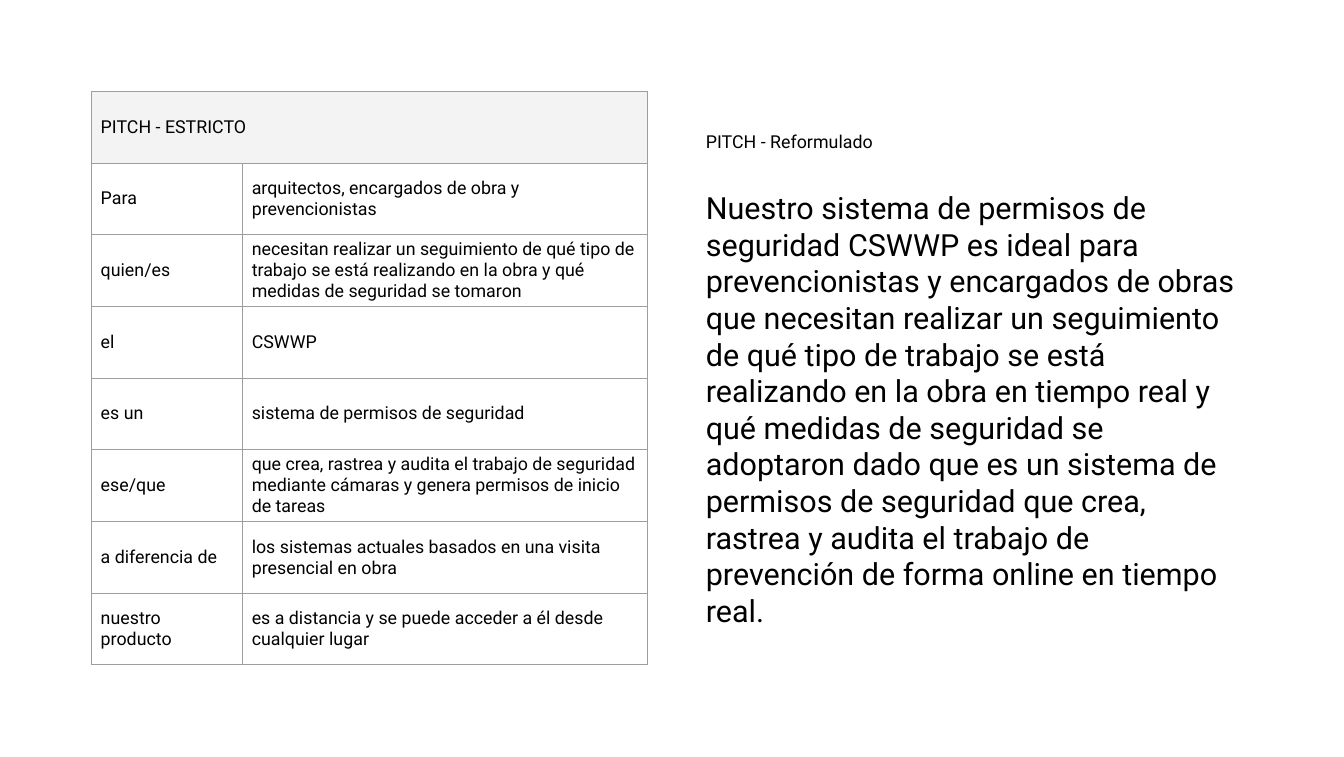
import pptx
import pptx.util
import pptx.dml.color
import pptx.enum.text
import pptx.oxml
import pptx.oxml.ns
import lxml.etree

theme = {
    "font": "Roboto",
    "text": "000000",
    "header": "F3F3F3",
    "border": "9E9E9E",
    "border_width": 0.75,
    "label_size": 14,
    "statement_size": 24,
    "statement_gap": 28.8,
}

pitch_heading = "PITCH - ESTRICTO"
pitch_parts = [
    ("Para", "arquitectos, encargados de obra y prevencionistas"),
    ("quien/es", "necesitan realizar un seguimiento de qué tipo de trabajo se está "
                 "realizando en la obra y qué medidas de seguridad se tomaron"),
    ("el", "CSWWP"),
    ("es un", "sistema de permisos de seguridad"),
    ("ese/que", "que crea, rastrea y audita el trabajo de seguridad mediante cámaras "
                "y genera permisos de inicio de tareas"),
    ("a diferencia de", "los sistemas actuales basados en una visita presencial en obra"),
    ("nuestro producto", "es a distancia y se puede acceder a él desde cualquier lugar"),
]
reformulated_heading = "PITCH - Reformulado"
reformulated_pitch = (
    "Nuestro sistema de permisos de seguridad CSWWP es ideal para prevencionistas y "
    "encargados de obras que necesitan realizar un seguimiento de qué tipo de trabajo "
    "se está realizando en la obra en tiempo real y qué medidas de seguridad se "
    "adoptaron dado que es un sistema de permisos de seguridad que crea, rastrea y "
    "audita el trabajo de prevención de forma online en tiempo real."
)


def add_run(paragraph, wording, size):
    run = paragraph.add_run()
    run.text = wording
    run.font.name = theme["font"]
    run.font.size = pptx.util.Pt(size)
    run.font.bold = False
    run.font.color.rgb = pptx.dml.color.RGBColor.from_string(theme["text"])


def border_cell(cell):
    properties = cell._tc.get_or_add_tcPr()
    for position, side in enumerate(("lnL", "lnR", "lnT", "lnB")):
        line = lxml.etree.Element(pptx.oxml.ns.qn(f"a:{side}"))
        line.set("w", str(pptx.util.Pt(theme["border_width"])))
        fill = lxml.etree.SubElement(line, pptx.oxml.ns.qn("a:solidFill"))
        color = lxml.etree.SubElement(fill, pptx.oxml.ns.qn("a:srgbClr"))
        color.set("val", theme["border"])
        properties.insert(position, line)


presentation = pptx.Presentation()
presentation.slide_width = pptx.util.Inches(14.68)
presentation.slide_height = pptx.util.Inches(8.27)
slide = presentation.slides.add_slide(presentation.slide_layouts[1])
slide_title = slide.shapes.title
slide_title.element.getparent().remove(slide_title.element)

margin = pptx.util.Inches(1)
gutter = pptx.util.Inches(0.54)
column_width = (presentation.slide_width - 2 * margin - gutter) // 2
label_width = pptx.util.Inches(1.65)
row_height = pptx.util.Inches(0.78)
row_count = len(pitch_parts) + 1

strict_pitch = slide.shapes.add_table(
    row_count, 2, margin, margin, column_width, row_height * row_count).table
strict_pitch.first_row = False
strict_pitch.horz_banding = False
strict_pitch.columns[0].width = label_width
strict_pitch.columns[1].width = column_width - label_width
strict_pitch.cell(0, 0).merge(strict_pitch.cell(0, 1))

for row_index, wordings in enumerate([(pitch_heading, "")] + pitch_parts):
    strict_pitch.rows[row_index].height = row_height
    for column_index, wording in enumerate(wordings):
        cell = strict_pitch.cell(row_index, column_index)
        cell.vertical_anchor = pptx.enum.text.MSO_ANCHOR.MIDDLE
        if row_index == 0:
            cell.fill.solid()
            cell.fill.fore_color.rgb = pptx.dml.color.RGBColor.from_string(theme["header"])
        else:
            cell.fill.background()
        border_cell(cell)
        if wording:
            add_run(cell.text_frame.paragraphs[0], wording, theme["label_size"])

reformulated = slide.placeholders[1]
reformulated.left = margin + column_width + gutter
reformulated.top = margin
reformulated.width = column_width
reformulated.height = pptx.util.Inches(6.3)
frame = reformulated.text_frame
frame.word_wrap = True
frame.auto_size = pptx.enum.text.MSO_AUTO_SIZE.NONE
frame.vertical_anchor = pptx.enum.text.MSO_ANCHOR.MIDDLE
frame.margin_left = frame.margin_right = pptx.util.Inches(0.1)
frame.margin_top = frame.margin_bottom = pptx.util.Inches(0.1)

heading_paragraph = frame.paragraphs[0]
statement_paragraph = frame.add_paragraph()
for paragraph, wording, size, gap in (
    (heading_paragraph, reformulated_heading, theme["label_size"], 0),
    (statement_paragraph, reformulated_pitch, theme["statement_size"], theme["statement_gap"]),
):
    paragraph.space_before = pptx.util.Pt(gap)
    paragraph_properties = paragraph._p.get_or_add_pPr()
    paragraph_properties.set("marL", "0")
    paragraph_properties.set("indent", "0")
    lxml.etree.SubElement(paragraph_properties, pptx.oxml.ns.qn("a:buNone"))
    add_run(paragraph, wording, size)

presentation.save("out.pptx")
